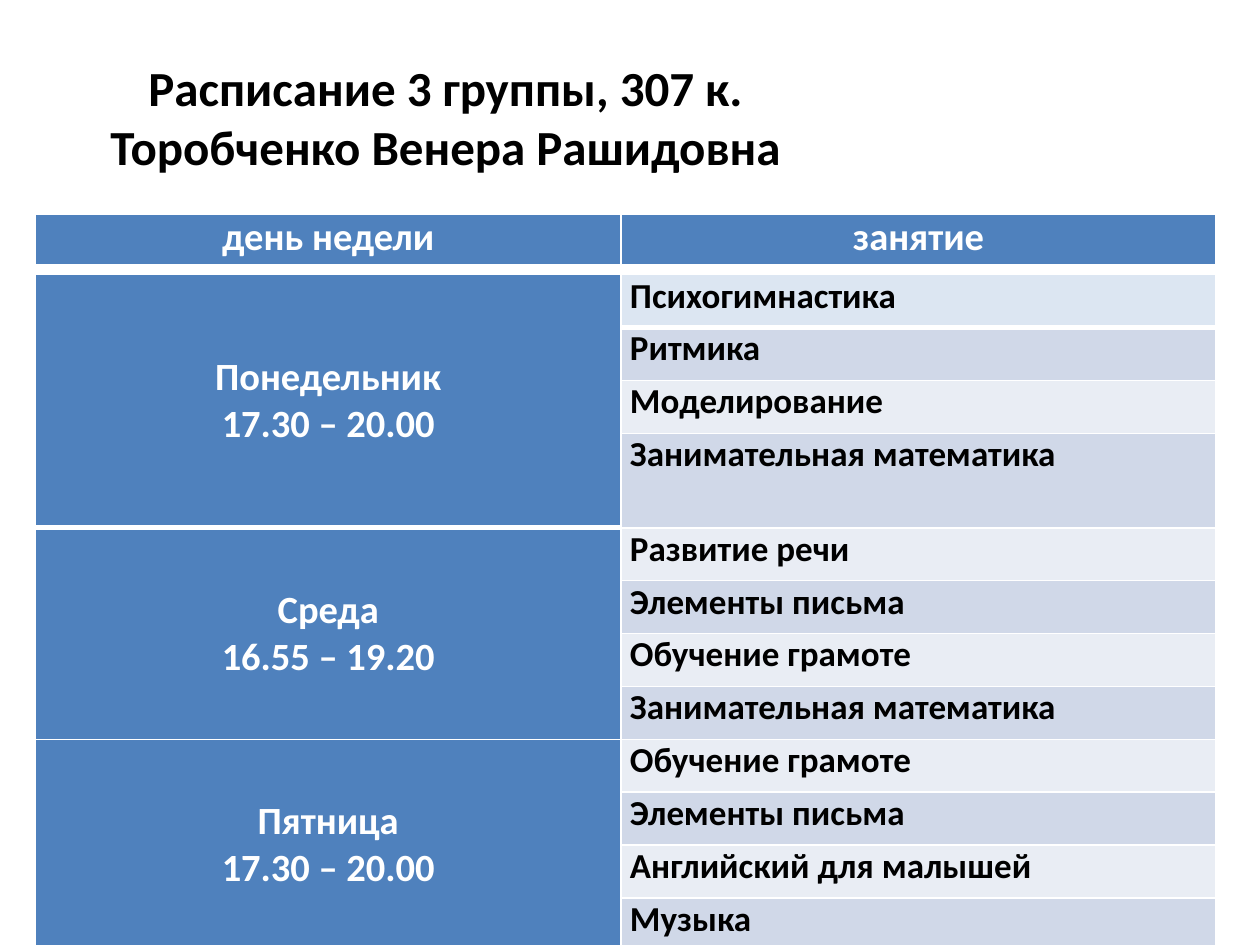
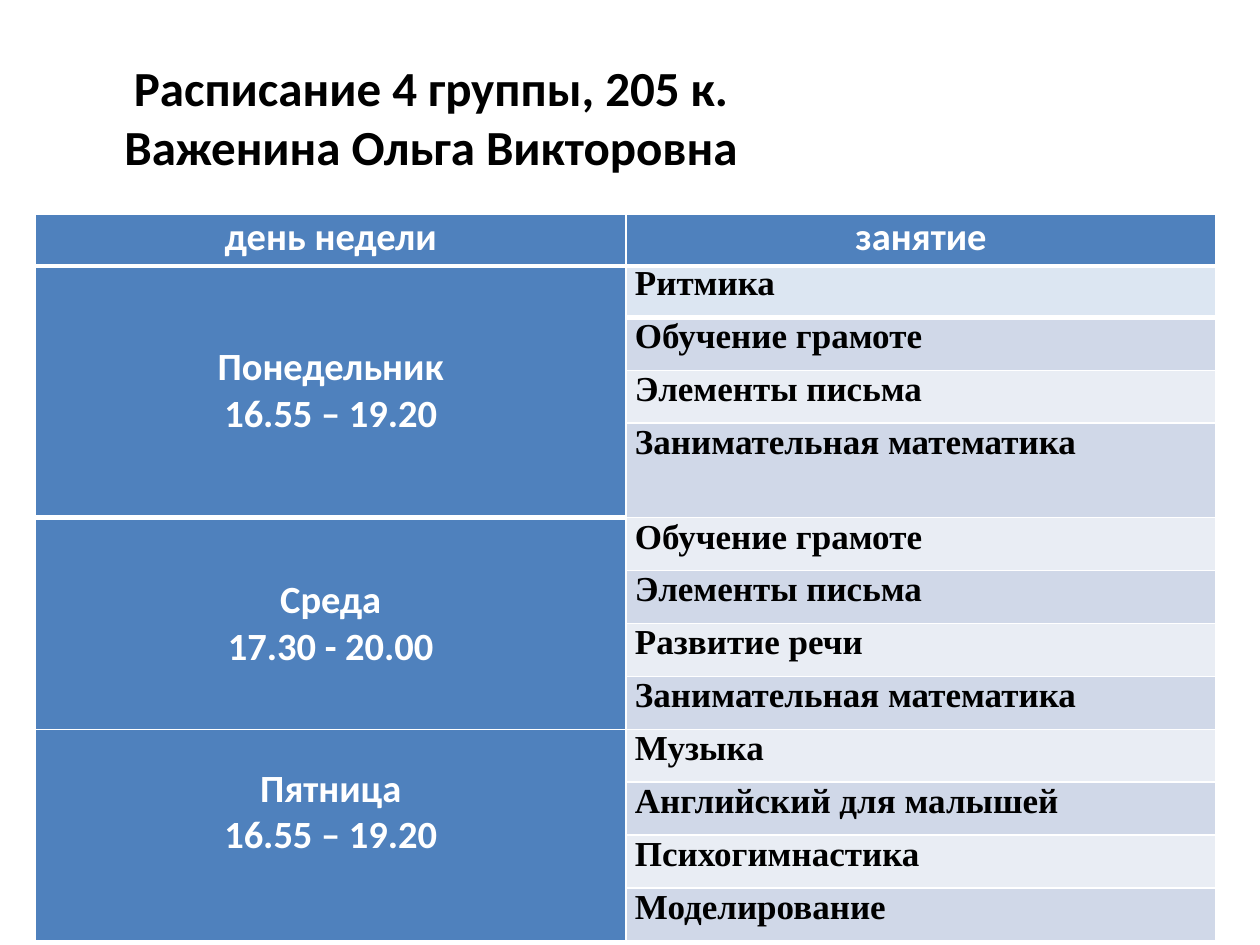
from dataclasses import dataclass

from pptx import Presentation
from pptx.dml.color import RGBColor
from pptx.enum.text import MSO_ANCHOR, PP_ALIGN
from pptx.oxml.ns import qn
from pptx.util import Inches, Pt
from lxml.etree import SubElement


@dataclass(frozen=True)
class Theme:
    white: str = "FFFFFF"
    black: str = "000000"
    blue: str = "4F81BD"
    first: str = "DCE6F2"
    bands: tuple = ("E9EDF4", "D0D8E8")
    font: str = "Calibri"
    title: int = 28
    head: int = 22
    body: int = 20
    thin: int = 1
    thick: int = 3


# Shared table measures, in inches
LEFT, WIDTH = 0.28, 9.37
HEAD_TOP, HEAD_ROW = 1.7, 0.41
ROW, TALL = 0.42, 0.75
SPAN = 4


class Deck:
    def __init__(self, theme):
        self.theme = theme
        self.prs = Presentation()
        self.prs.slide_width = Inches(10)
        self.prs.slide_height = Inches(7.5)
        self.slide = None

    def add(self):
        self.slide = self.prs.slides.add_slide(self.prs.slide_layouts[6])

    def style(self, frame, size, color, align, font=None):
        for para in frame.paragraphs:
            para.alignment = align
            for run in para.runs:
                run.font.size = Pt(size)
                run.font.name = font or self.theme.font
                run.font.bold = True
                run.font.color.rgb = RGBColor.from_string(color)

    def title(self, text, width):
        box = self.slide.shapes.add_textbox(
            Inches(0.5), Inches(0.3), Inches(width), Inches(1.25))
        frame = box.text_frame
        frame.word_wrap = True
        frame.vertical_anchor = MSO_ANCHOR.MIDDLE
        frame.paragraphs[0].text = text
        self.style(frame, self.theme.title, self.theme.black, PP_ALIGN.CENTER)

    def grid(self, top, rows, split):
        shape = self.slide.shapes.add_table(
            len(rows), 2, Inches(LEFT), Inches(top),
            Inches(WIDTH), Inches(sum(rows)))
        table = shape.table
        for col, width in zip(table.columns, (split, WIDTH - split)):
            col.width = Inches(width)
        for row, height in zip(table.rows, rows):
            row.height = Inches(height)
        return table

    def cell(self, cell, fill, heavy=False):
        cell.margin_left = cell.margin_right = Inches(0.07)
        cell.margin_top = cell.margin_bottom = 0
        props = cell._tc.get_or_add_tcPr()
        for side in "LRTB":
            width = self.theme.thick if heavy and side == "B" else self.theme.thin
            line = SubElement(props, qn(f"a:ln{side}"), w=str(Pt(width)))
            paint = SubElement(line, qn("a:solidFill"))
            SubElement(paint, qn("a:srgbClr"), val=self.theme.white)
        cell.fill.solid()
        cell.fill.fore_color.rgb = RGBColor.from_string(fill)

    def label(self, cell, text):
        cell.text_frame.text = text
        self.style(cell.text_frame, self.theme.head, self.theme.white,
                   PP_ALIGN.CENTER)

    def header(self, split):
        table = self.grid(HEAD_TOP, [HEAD_ROW], split)
        for cell, text in zip(table.rows[0].cells, ("день недели", "занятие")):
            self.cell(cell, self.theme.blue, heavy=True)
            self.label(cell, text)

    def plan(self, top, split, days, font, align, lift):
        rows = [ROW] * (SPAN * len(days))
        rows[SPAN - 1] = TALL
        table = self.grid(top, rows, split)
        for num, (day, hours, tasks) in enumerate(days):
            start = num * SPAN
            # Lessons, one per row in alternating bands
            for row, task in enumerate(tasks, start):
                self.cell(table.cell(row, 0), self.theme.blue, row == 0)
                cell = table.cell(row, 1)
                fill = self.theme.bands[row % 2] if row else self.theme.first
                self.cell(cell, fill, row == 0)
                cell.text_frame.text = task
                self.style(cell.text_frame, self.theme.body, self.theme.black,
                           align, font)
            # Day and hours beside its lessons
            cell = table.cell(start, 0)
            cell.merge(table.cell(start + SPAN - 1, 0))
            cell.vertical_anchor = MSO_ANCHOR.MIDDLE
            self.label(cell, f"{day}\n{hours}")
        cell.margin_bottom = Inches(lift)


MATH = "Занимательная математика"
READ = "Обучение грамоте"
WRITE = "Элементы письма"
TALK = "Развитие речи"
KIDS = "Английский для малышей"
MIND = "Психогимнастика"
DANCE = "Ритмика"
MODEL = "Моделирование"
MUSIC = "Музыка"
EARLY, LATE = "16.55 – 19.20", "17.30 – 20.00"

GROUPS = [
    dict(title="Расписание 3 группы, 307 к.\nТоробченко Венера Рашидовна",
         width=6.07, top=2.18, split=4.65, font="Calibri",
         align=PP_ALIGN.LEFT, lift=0,
         days=[("Понедельник", LATE, (MIND, DANCE, MODEL, MATH)),
               ("Среда", EARLY, (TALK, WRITE, READ, MATH)),
               ("Пятница", LATE, (READ, WRITE, KIDS, MUSIC))]),
    dict(title="Расписание 4 группы, 205 к.\nВаженина Ольга Викторовна",
         width=5.84, top=2.1, split=4.69, font="Times New Roman",
         align=PP_ALIGN.JUSTIFY, lift=0.36,
         days=[("Понедельник", EARLY, (DANCE, READ, WRITE, MATH)),
               ("Среда", "17.30 - 20.00", (READ, WRITE, TALK, MATH)),
               ("Пятница", EARLY, (MUSIC, KIDS, MIND, MODEL))]),
]


def main():
    deck = Deck(Theme())
    for group in GROUPS:
        deck.add()
        deck.title(group["title"], group["width"])
        deck.plan(group["top"], group["split"], group["days"],
                  group["font"], group["align"], group["lift"])
        deck.header(group["split"])
    deck.prs.save("out.pptx")


if __name__ == "__main__":
    main()
